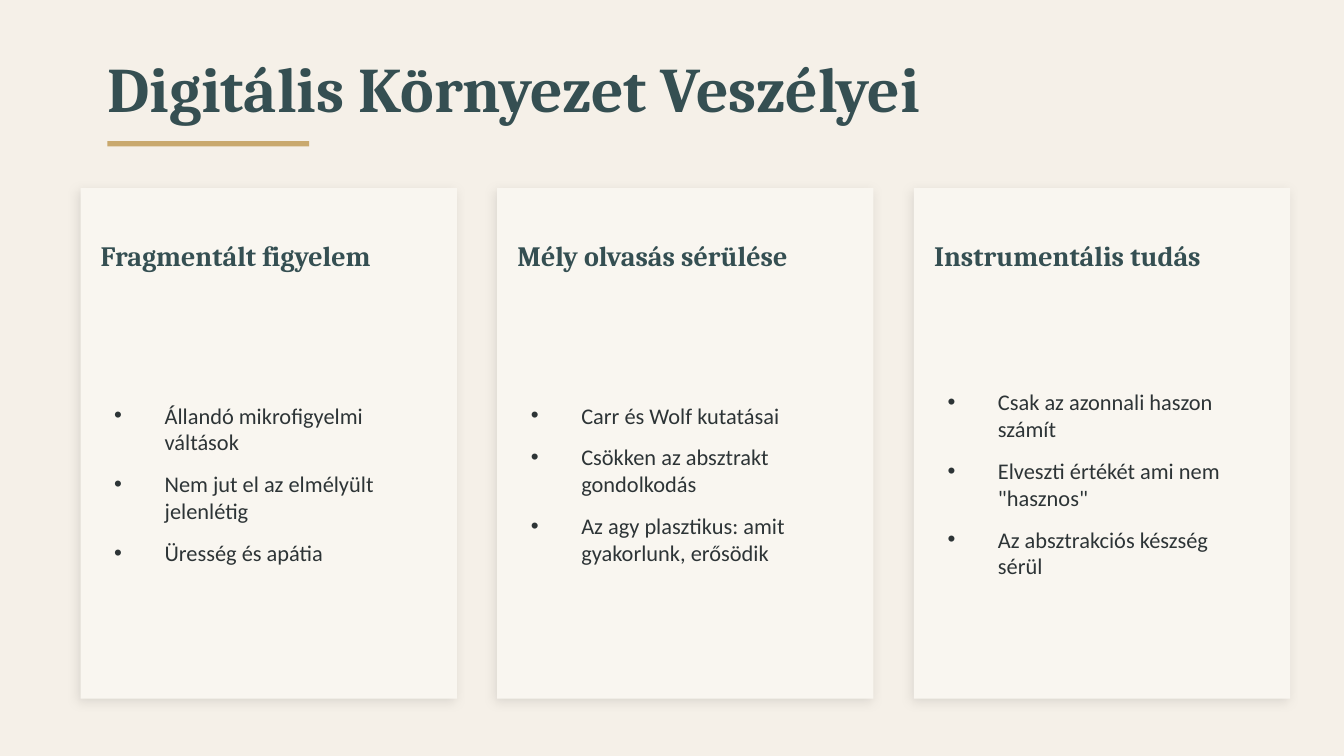
import pptx
import pptx.dml.color
import pptx.enum.shapes
import pptx.enum.text
import pptx.oxml
import pptx.oxml.ns
import pptx.util

Inches = pptx.util.Inches
Pt = pptx.util.Pt

COLORS = {
    "paper": "F5F0E8",
    "card": "F9F6F0",
    "heading": "354F52",
    "body": "2D3436",
    "accent": "C9A96E",
    "shadow": "000000",
}

TITLE = "Digitális Környezet Veszélyei"
CARDS = [
    ("Fragmentált figyelem", [
        "Állandó mikrofigyelmi váltások",
        "Nem jut el az elmélyült jelenlétig",
        "Üresség és apátia",
    ]),
    ("Mély olvasás sérülése", [
        "Carr és Wolf kutatásai",
        "Csökken az absztrakt gondolkodás",
        "Az agy plasztikus: amit gyakorlunk, erősödik",
    ]),
    ("Instrumentális tudás", [
        "Csak az azonnali haszon számít",
        'Elveszti értékét ami nem "hasznos"',
        "Az absztrakciós készség sérül",
    ]),
]

# Boxes are (left, top, width, height) in inches.
SLIDE_WIDTH = 10
SLIDE_HEIGHT = SLIDE_WIDTH * 9 / 16
HEADER_BOX = (0.8, 0.3, 8.4, 0.79)
CARD_ROW_BOX = (0.6, 1.4, 9, 3.8)
CARD_GAP = 0.3
CARD_PADDING = 0.15


def rgb(name):
    return pptx.dml.color.RGBColor.from_string(COLORS[name])


def place(shape, box):
    shape.left, shape.top, shape.width, shape.height = map(Inches, box)


def set_text(shape, lines, font_name, size, color, bold=False, margin=None):
    """Fill a text shape with evenly styled, left-aligned paragraphs."""
    frame = shape.text_frame
    frame.text = "\n".join(lines)
    frame.word_wrap = True
    frame.auto_size = pptx.enum.text.MSO_AUTO_SIZE.NONE
    frame.vertical_anchor = pptx.enum.text.MSO_ANCHOR.MIDDLE
    if margin is not None:
        frame.margin_left = frame.margin_right = Inches(margin)
        frame.margin_top = frame.margin_bottom = Inches(margin)
    for para in frame.paragraphs:
        para.alignment = pptx.enum.text.PP_ALIGN.LEFT
        para.space_before = Pt(0)
        para.font.name = font_name
        para.font.size = Pt(size)
        para.font.bold = bold
        para.font.color.rgb = rgb(color)


def add_bullets(shape, indent):
    for para in shape.text_frame.paragraphs:
        para.space_after = Pt(8)
        properties = para._p.get_or_add_pPr()
        properties.set("marL", str(indent))
        properties.set("indent", str(-indent))
        bullet = pptx.oxml.parse_xml(
            f'<a:buChar {pptx.oxml.ns.nsdecls("a")} char="•"/>')
        font = properties.find(pptx.oxml.ns.qn("a:defRPr"))
        font.addprevious(bullet)


def add_rectangle(page, box, color):
    rectangle = page.shapes.add_shape(
        pptx.enum.shapes.MSO_SHAPE.RECTANGLE, *map(Inches, box))
    rectangle.shadow.inherit = False
    rectangle.fill.solid()
    rectangle.fill.fore_color.rgb = rgb(color)
    rectangle.line.fill.background()
    return rectangle


def add_soft_shadow(shape):
    effects = shape._element.spPr.find(pptx.oxml.ns.qn("a:effectLst"))
    effects.append(pptx.oxml.parse_xml(
        f'<a:outerShdw {pptx.oxml.ns.nsdecls("a")} blurRad="{Pt(6)}" '
        f'dist="{Pt(2)}" dir="{135 * 60000}" algn="bl" rotWithShape="0">'
        f'<a:srgbClr val="{COLORS["shadow"]}"><a:alpha val="10000"/>'
        '</a:srgbClr></a:outerShdw>'))


def build_header(page, box):
    left, top, width, height = box
    rule_height = 0.04
    title = page.shapes.title
    place(title, (left, top, width, 0.7))
    set_text(title, [TITLE], "Cambria", 34, "heading", bold=True, margin=0)
    add_rectangle(
        page, (left, top + height - rule_height, 1.5, rule_height), "accent")


def build_card(page, box, heading, items, body):
    left, top, width, height = box
    inner_left = left + CARD_PADDING
    inner_width = width - 2 * CARD_PADDING
    add_soft_shadow(add_rectangle(page, box, "card"))

    label = page.shapes.add_textbox(
        *map(Inches, (inner_left, top + 0.2, inner_width, 0.6)))
    set_text(label, [heading], "Cambria", 15, "heading", bold=True, margin=0)

    # The list placeholder predates the card, so bring it to the front.
    page.shapes._spTree.append(body._element)
    place(body, (inner_left, top + 0.9, inner_width, height - 1.2))
    set_text(body, items, "Calibri", 12, "body")
    add_bullets(body, Pt(27))


def build_card_row(page, box):
    left, top, width, height = box
    card_width = (width - CARD_GAP * (len(CARDS) - 1)) / len(CARDS)
    bodies = [holder for holder in page.placeholders
              if holder.placeholder_format.idx != 0]
    for column, ((heading, items), body) in enumerate(zip(CARDS, bodies)):
        card_left = left + column * (card_width + CARD_GAP)
        build_card(page, (card_left, top, card_width, height),
                   heading, items, body)
    for spare in bodies[len(CARDS):]:
        spare._element.getparent().remove(spare._element)


def main():
    deck = pptx.Presentation()
    deck.slide_width = Inches(SLIDE_WIDTH)
    deck.slide_height = Inches(SLIDE_HEIGHT)
    page = deck.slides.add_slide(deck.slide_layouts.get_by_name("Comparison"))
    page.background.fill.solid()
    page.background.fill.fore_color.rgb = rgb("paper")
    build_header(page, HEADER_BOX)
    build_card_row(page, CARD_ROW_BOX)
    deck.save("out.pptx")


if __name__ == "__main__":
    main()
